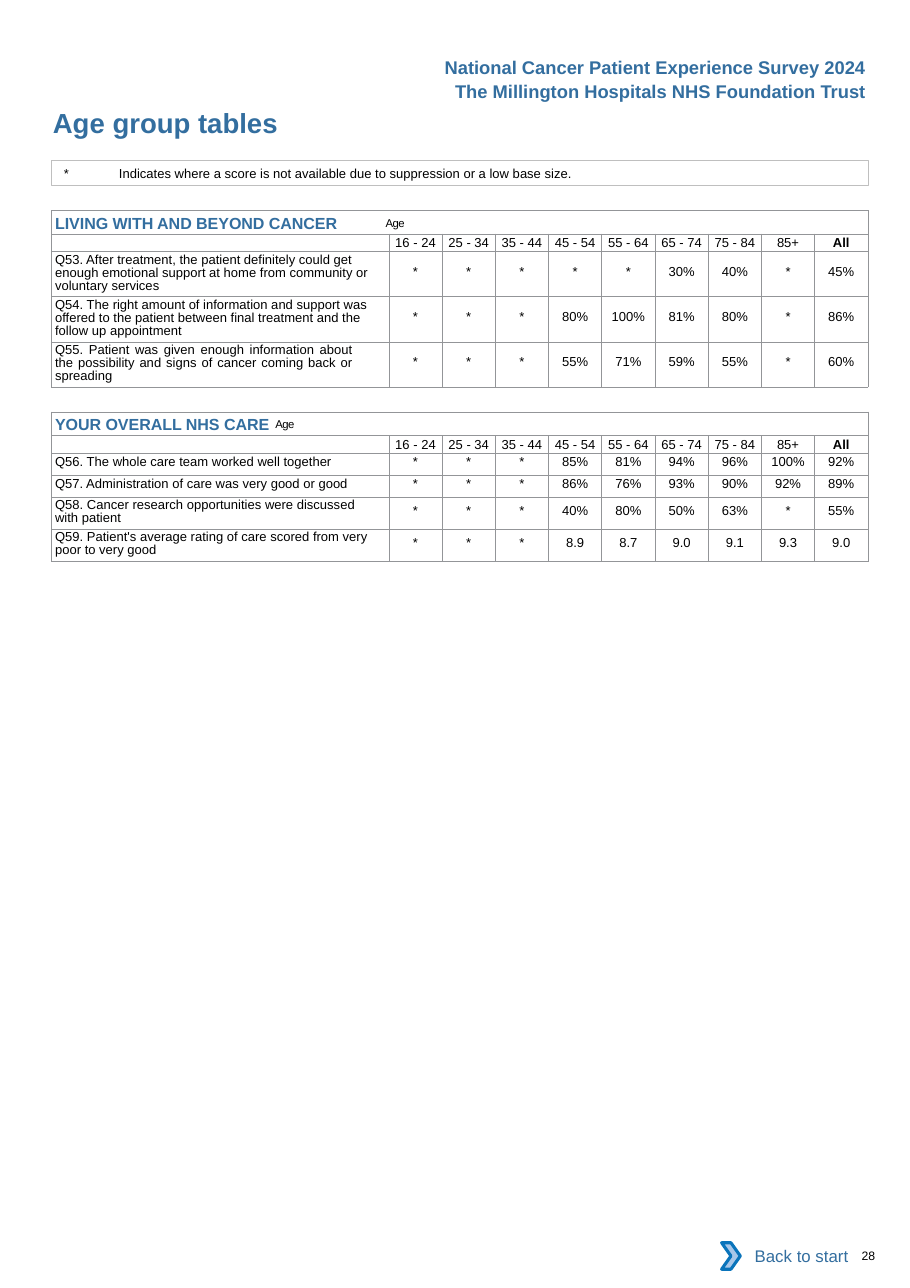
"""Build the age group tables page of a patient experience survey."""
from lxml import etree
from pptx import Presentation
from pptx.dml.color import RGBColor
from pptx.enum import shapes, text
from pptx.oxml import ns
from pptx.util import Inches, Pt

BLUE = RGBColor(0x33, 0x6E, 0x9F)
BLACK = RGBColor(0, 0, 0)
WHITE = RGBColor(0xFF, 0xFF, 0xFF)
NOTE_GREY = RGBColor(0xBF, 0xBF, 0xBF)
GRID_GREY = RGBColor(0x93, 0x95, 0x98)
ARROW_FILL = RGBColor(0xA8, 0xC7, 0xE9)
ARROW_LINE = RGBColor(0x0A, 0x74, 0xBB)
LEFT, RIGHT, CENTER, JUSTIFY = (text.PP_ALIGN.LEFT, text.PP_ALIGN.RIGHT,
                                text.PP_ALIGN.CENTER, text.PP_ALIGN.JUSTIFY)


def write(frame, words, size, color=BLACK, bold=False, align=LEFT):
    frame.word_wrap = True
    paragraph = frame.paragraphs[0]
    paragraph.text = words
    paragraph.alignment = align
    for run in paragraph.runs:
        run.font.name = "Arial"
        run.font.size = Pt(size)
        run.font.bold = bold
        run.font.color.rgb = color
    return paragraph


def indent(paragraph, margin, tab):
    properties = paragraph._p.get_or_add_pPr()
    properties.set("marL", str(Inches(margin)))
    properties.set("indent", "0")
    stops = etree.SubElement(properties, ns.qn("a:tabLst"))
    etree.SubElement(stops, ns.qn("a:tab"), pos=str(Inches(tab)), algn="l")


prs = Presentation()
prs.slide_width, prs.slide_height = Inches(8.26), Inches(11.69)
slide = prs.slides.add_slide(prs.slide_layouts[6])

labels = [
    ("28", 7.82, 11.33, 0.41, 0.13, 8, BLACK, False, LEFT, 0),
    ("Age group tables", 0.48, 0.96, 4.12, 0.3, 18, BLUE, True, LEFT, 0),
    ("The Millington Hospitals NHS Foundation Trust",
     3.6, 0.68, 4.36, 0.3, 12, BLUE, True, RIGHT, 0.05),
    ("National Cancer Patient Experience Survey 2024",
     3.6, 0.46, 4.36, 0.3, 12, BLUE, True, RIGHT, 0.05),
]
for words, x, y, w, h, size, color, bold, align, inset in labels:
    frame = slide.shapes.add_textbox(Inches(x), Inches(y), Inches(w), Inches(h)).text_frame
    frame.margin_top = frame.margin_bottom = Inches(inset)
    frame.margin_left = frame.margin_right = Inches(2 * inset)
    write(frame, words, size, color, bold, align)

ages = ["16 - 24", "25 - 34", "35 - 44", "45 - 54", "55 - 64",
        "65 - 74", "75 - 84", "85+", "All"]
sections = [
    ("LIVING WITH AND BEYOND CANCER", 1.91, [
        ("Q53. After treatment, the patient definitely could get enough emotional "
         "support at home from community or voluntary services", 3, LEFT,
         "* * * * * 30% 40% * 45%"),
        ("Q54. The right amount of information and support was offered to the patient "
         "between final treatment and the follow up appointment", 3, LEFT,
         "* * * 80% 100% 81% 80% * 86%"),
        ("Q55. Patient was given enough information about the possibility and signs of "
         "cancer coming back or spreading", 3, JUSTIFY,
         "* * * 55% 71% 59% 55% * 60%"),
    ]),
    ("YOUR OVERALL NHS CARE", 3.74, [
        ("Q56. The whole care team worked well together", 1, LEFT,
         "* * * 85% 81% 94% 96% 100% 92%"),
        ("Q57. Administration of care was very good or good", 1, LEFT,
         "* * * 86% 76% 93% 90% 92% 89%"),
        ("Q58. Cancer research opportunities were discussed with patient", 2, LEFT,
         "* * * 40% 80% 50% 63% * 55%"),
        ("Q59. Patient's average rating of care scored from very poor to very good", 2, LEFT,
         "* * * 8.9 8.7 9.0 9.1 9.3 9.0"),
    ]),
]
row_height = {1: 0.2, 2: 0.29, 3: 0.41}
score_inset = {1: 0.01, 2: 0.06, 3: 0.12}
question_width, table_width = 3.06, 7.41

for heading, top, questions in sections:
    heights = [0.21, 0.16] + [row_height[lines] for _, lines, _, _ in questions]
    table = slide.shapes.add_table(len(heights), 10, Inches(0.47), Inches(top),
                                   Inches(table_width), Inches(sum(heights))).table
    table.first_row = table.horz_banding = False
    for index, column in enumerate(table.columns):
        column.width = Inches((table_width - question_width) / 9 if index else question_width)
    for row, height in zip(table.rows, heights):
        row.height = Inches(height)
    for cell in table.iter_cells():
        cell.margin_left = cell.margin_right = cell.margin_top = cell.margin_bottom = 0
        cell.text_frame.paragraphs[0]._p.get_or_add_endParaRPr().set("sz", "850")
        for side in ("lnL", "lnR", "lnT", "lnB"):
            border = etree.SubElement(cell._tc.get_or_add_tcPr(), ns.qn("a:" + side),
                                      w=str(Pt(0.5)))
            fill = etree.SubElement(border, ns.qn("a:solidFill"))
            etree.SubElement(fill, ns.qn("a:srgbClr"), val=str(GRID_GREY))
        cell.fill.background()

    title = table.cell(0, 0)
    title.merge(table.cell(0, 9))
    title.vertical_anchor = text.MSO_ANCHOR.MIDDLE
    paragraph = write(title.text_frame, heading + "\t", 10.5, BLUE, True)
    paragraph.space_before = Pt(0.5)
    indent(paragraph, 0.03, 5.04)
    age = paragraph.add_run()
    age.text = "Age"
    age.font.name, age.font.size, age.font.color.rgb = "Arial", Pt(12.8), BLACK
    age.font._element.set("baseline", "10000")
    age.font._element.set("spc", "-40")

    for column, group in enumerate(ages, 1):
        cell = table.cell(1, column)
        cell.vertical_anchor = text.MSO_ANCHOR.MIDDLE
        write(cell.text_frame, group, 8.5, bold=group == "All",
              align=CENTER).line_spacing = Pt(9.9)

    for row, (question, lines, align, scores) in enumerate(questions, 2):
        cell = table.cell(row, 0)
        cell.margin_left = Inches(0.03)
        cell.margin_right = Inches(0.33 if align == JUSTIFY else 0.12)
        cell.margin_top = Inches(0.02 if lines > 1 else 0.01)
        paragraph = write(cell.text_frame, question, 8.5, align=align)
        paragraph.space_before = Pt(1.6 if lines > 1 else 1.1)
        if lines > 1:
            paragraph.line_spacing = Pt(8.6)
        for column, score in enumerate(scores.split(), 1):
            cell = table.cell(row, column)
            cell.margin_top = Inches(score_inset[lines])
            paragraph = write(cell.text_frame, score, 8.5, align=CENTER)
            paragraph.space_before = Inches(score_inset[lines])

note = slide.shapes.add_shape(shapes.MSO_SHAPE.RECTANGLE, Inches(0.47), Inches(1.46),
                              Inches(table_width), Inches(0.22))
note.shadow.inherit = False
note.fill.background()
note.line.color.rgb, note.line.width = NOTE_GREY, Pt(0.5)
frame = note.text_frame
frame.margin_left = frame.margin_right = frame.margin_top = frame.margin_bottom = 0
indent(write(frame, "*\tIndicates where a score is not available due to suppression "
             "or a low base size.", 8.5), 0.11, 0.34)

back = slide.shapes.add_shape(shapes.MSO_SHAPE.RECTANGLE, Inches(6.62), Inches(11.19),
                              Inches(1.18), Inches(0.42))
back.shadow.inherit = False
back.fill.solid()
back.fill.fore_color.rgb = WHITE
back.line.fill.background()
write(back.text_frame, "Back to start", 11, BLUE, align=RIGHT)

arrow = slide.shapes.add_shape(shapes.MSO_SHAPE.CHEVRON, Inches(6.55), Inches(11.28),
                               Inches(0.17), Inches(0.24))
arrow.shadow.inherit = False
arrow.fill.solid()
arrow.fill.fore_color.rgb = ARROW_FILL
arrow.line.color.rgb, arrow.line.width = ARROW_LINE, Pt(2)

prs.save("out.pptx")
